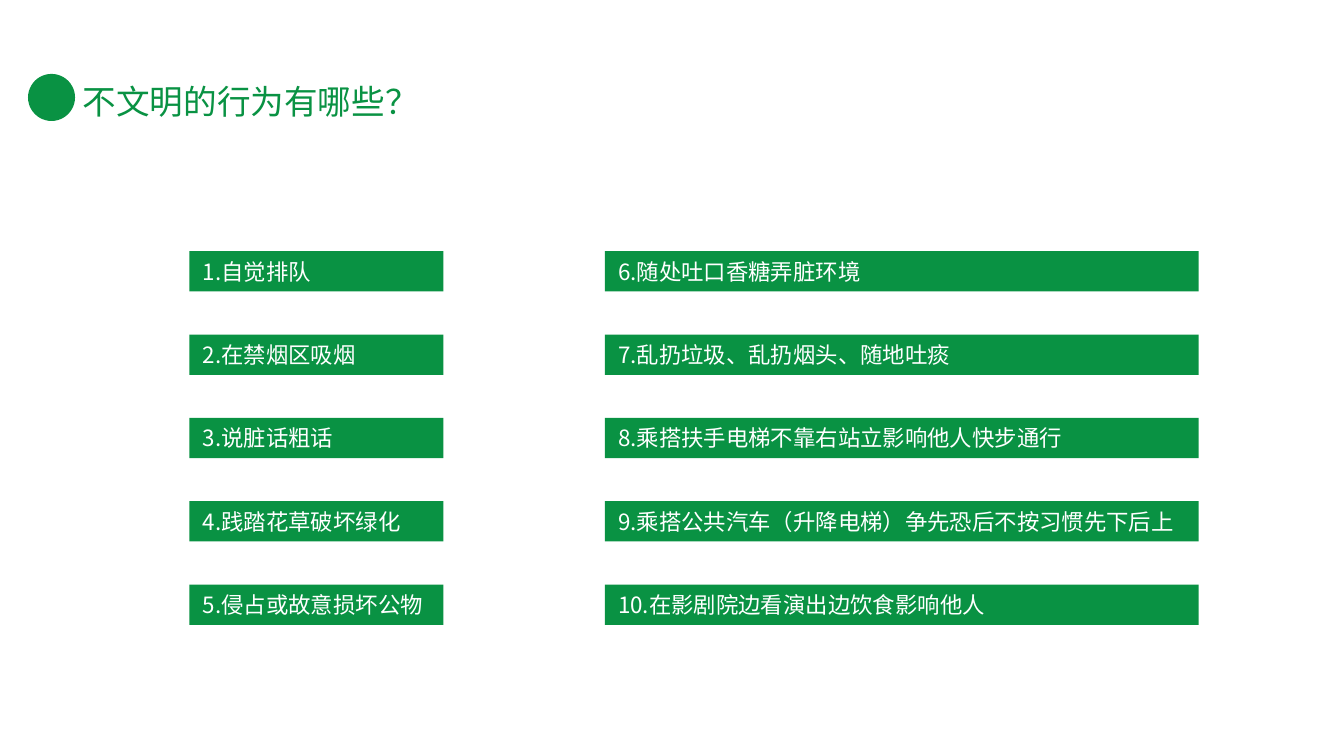
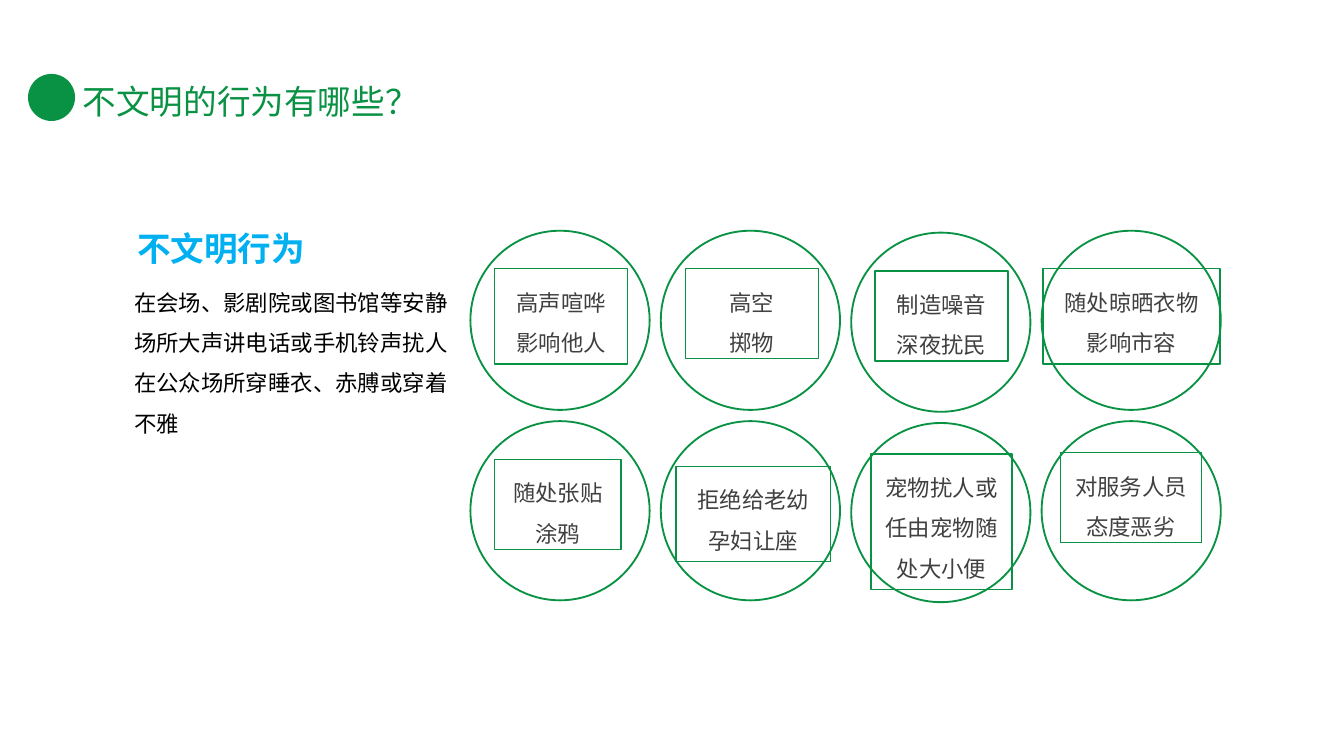
from dataclasses import dataclass

from lxml import etree
from pptx import Presentation
from pptx.dml.color import RGBColor
from pptx.enum.shapes import MSO_SHAPE
from pptx.enum.text import MSO_ANCHOR, MSO_AUTO_SIZE, PP_ALIGN
from pptx.oxml.ns import qn
from pptx.util import Pt

RECTANGLE, OVAL = MSO_SHAPE.RECTANGLE, MSO_SHAPE.OVAL
LEFT, CENTER = PP_ALIGN.LEFT, PP_ALIGN.CENTER
TOP = MSO_ANCHOR.TOP
GROW = MSO_AUTO_SIZE.SHAPE_TO_FIT_TEXT


@dataclass(frozen=True)
class Theme:
    font: str = "Noto Sans CJK SC"
    green: str = "099243"
    blue: str = "00B0F0"
    gray: str = "404040"
    black: str = "000000"
    white: str = "FFFFFF"
    title_size: int = 18
    body_size: int = 12
    line_spacing: float = 1.5
    box_line: float = 0.75
    circle_line: float = 1


THEME = Theme()

TITLE = "不文明的行为有哪些？"

# left, width, texts
BAR_COLUMNS = [
    (101.5, 136.1, [
        "1.自觉排队",
        "2.在禁烟区吸烟",
        "3.说脏话粗话",
        "4.践踏花草破坏绿化",
        "5.侵占或故意损坏公物",
    ]),
    (324, 318.2, [
        "6.随处吐口香糖弄脏环境",
        "7.乱扔垃圾、乱扔烟头、随地吐痰",
        "8.乘搭扶手电梯不靠右站立影响他人快步通行",
        "9.乘搭公共汽车（升降电梯）争先恐后不按习惯先下后上",
        "10.在影剧院边看演出边饮食影响他人",
    ]),
]
BAR_TOP, BAR_PITCH, BAR_HEIGHT = 134.6, 44.64, 21.6

SUBTITLE = "不文明行为"
DESCRIPTION = "在会场、影剧院或图书馆等安静场所大声讲电话或手机铃声扰人在公众场所穿睡衣、赤膊或穿着不雅"

# Two rows of circles: text, then left, top, width and height of its box
CIRCLE_ROWS = [
    [
        ("高声喧哗影响他人", (265, 144, 71.3, 51.1)),
        ("高空\n掷物", (367.2, 144, 71.3, 48.2)),
        ("制造噪音深夜扰民", (468.7, 145.2, 71.3, 48.2)),
        ("随处晾晒衣物影响市容", (558.7, 144, 95, 51.1)),
    ],
    [
        ("随处张贴涂鸦", (265, 246.2, 67.7, 48.2)),
        ("拒绝给老幼孕妇让座", (362.2, 249.8, 82.8, 51.1)),
        ("宠物扰人或任由宠物随处大小便", (466.6, 243.2, 75.6, 72.7)),
        ("对服务人员态度恶劣", (568.1, 242.6, 75.6, 48.2)),
    ],
]
CIRCLE_LEFT, CIRCLE_TOP, CIRCLE_PITCH, CIRCLE_SIZE = 252, 123.6, 102, 96
LOWERED_COLUMN, LOWERED_BY = 2, 1


def apply_formats(target, formats):
    for name, value in formats.items():
        setattr(target, name, value)


def write_text(shape, text, color, size=THEME.body_size, bold=False, wrap=True, **paragraph_formats):
    """Fill the shape with one paragraph for each line of the text."""
    frame = shape.text_frame
    apply_formats(frame, {"word_wrap": wrap, "auto_size": GROW, "vertical_anchor": TOP})
    for index, line in enumerate(text.split("\n")):
        paragraph = frame.add_paragraph() if index else frame.paragraphs[0]
        apply_formats(paragraph, {"alignment": LEFT, **paragraph_formats})
        run = paragraph.add_run()
        run.text = line
        apply_formats(run.font, {"name": THEME.font, "size": Pt(size), "bold": bold})
        run.font.color.rgb = RGBColor.from_string(color)
        east_asian = etree.SubElement(run._r.get_or_add_rPr(), qn("a:ea"))
        east_asian.set("typeface", THEME.font)


def add_text(slide, bounds, text, color, **formats):
    write_text(slide.shapes.add_textbox(*map(Pt, bounds)), text, color, **formats)


def add_figure(shapes, kind, bounds, fill=None, line_width=None):
    """Add a preset shape, either filled or outlined in green."""
    shape = shapes.add_shape(kind, *map(Pt, bounds))
    shape.shadow.inherit = False
    if fill:
        shape.fill.solid()
        shape.fill.fore_color.rgb = RGBColor.from_string(fill)
    else:
        shape.fill.background()
    if line_width:
        shape.line.color.rgb = RGBColor.from_string(THEME.green)
        shape.line.width = Pt(line_width)
    else:
        shape.line.fill.background()
    return shape


def add_titled_slide(presentation):
    slide = presentation.slides.add_slide(presentation.slide_layouts[6])
    add_text(slide, (36, 39.6, 196.6, 28.8), TITLE, THEME.green,
             size=THEME.title_size, wrap=False, alignment=CENTER)
    add_figure(slide.shapes, OVAL, (15, 39.6, 25.2, 25.2), fill=THEME.green)
    return slide


def add_bar_column(slide, left, width, texts):
    for row, text in enumerate(texts):
        bounds = (left, BAR_TOP + row * BAR_PITCH, width, BAR_HEIGHT)
        bar = add_figure(slide.shapes, RECTANGLE, bounds, fill=THEME.green)
        write_text(bar, text, THEME.white)


def add_circle(slide, row, column, text, box_bounds):
    """Group a boxed text with the circle around it."""
    shapes = slide.shapes.add_group_shape().shapes
    box = add_figure(shapes, RECTANGLE, box_bounds, line_width=THEME.box_line)
    write_text(box, text, THEME.gray, alignment=CENTER, line_spacing=THEME.line_spacing)
    left = CIRCLE_LEFT + column * CIRCLE_PITCH
    top = CIRCLE_TOP + row * CIRCLE_PITCH + (LOWERED_BY if column == LOWERED_COLUMN else 0)
    add_figure(shapes, OVAL, (left, top, CIRCLE_SIZE, CIRCLE_SIZE), line_width=THEME.circle_line)


def build_list_slide(presentation):
    slide = add_titled_slide(presentation)
    for left, width, texts in BAR_COLUMNS:
        add_bar_column(slide, left, width, texts)


def build_circle_slide(presentation):
    slide = add_titled_slide(presentation)
    add_text(slide, (64.8, 144, 187.2, 94.3), DESCRIPTION, THEME.black,
             line_spacing=THEME.line_spacing)
    for row, items in enumerate(CIRCLE_ROWS):
        for column, (text, box_bounds) in enumerate(items):
            add_circle(slide, row, column, text, box_bounds)
    add_text(slide, (66.4, 118.8, 113.8, 28.8), SUBTITLE, THEME.blue,
             size=THEME.title_size, bold=True)


def main():
    presentation = Presentation()
    apply_formats(presentation, {"slide_width": Pt(720), "slide_height": Pt(405)})
    build_list_slide(presentation)
    build_circle_slide(presentation)
    presentation.save("out.pptx")


if __name__ == "__main__":
    main()
